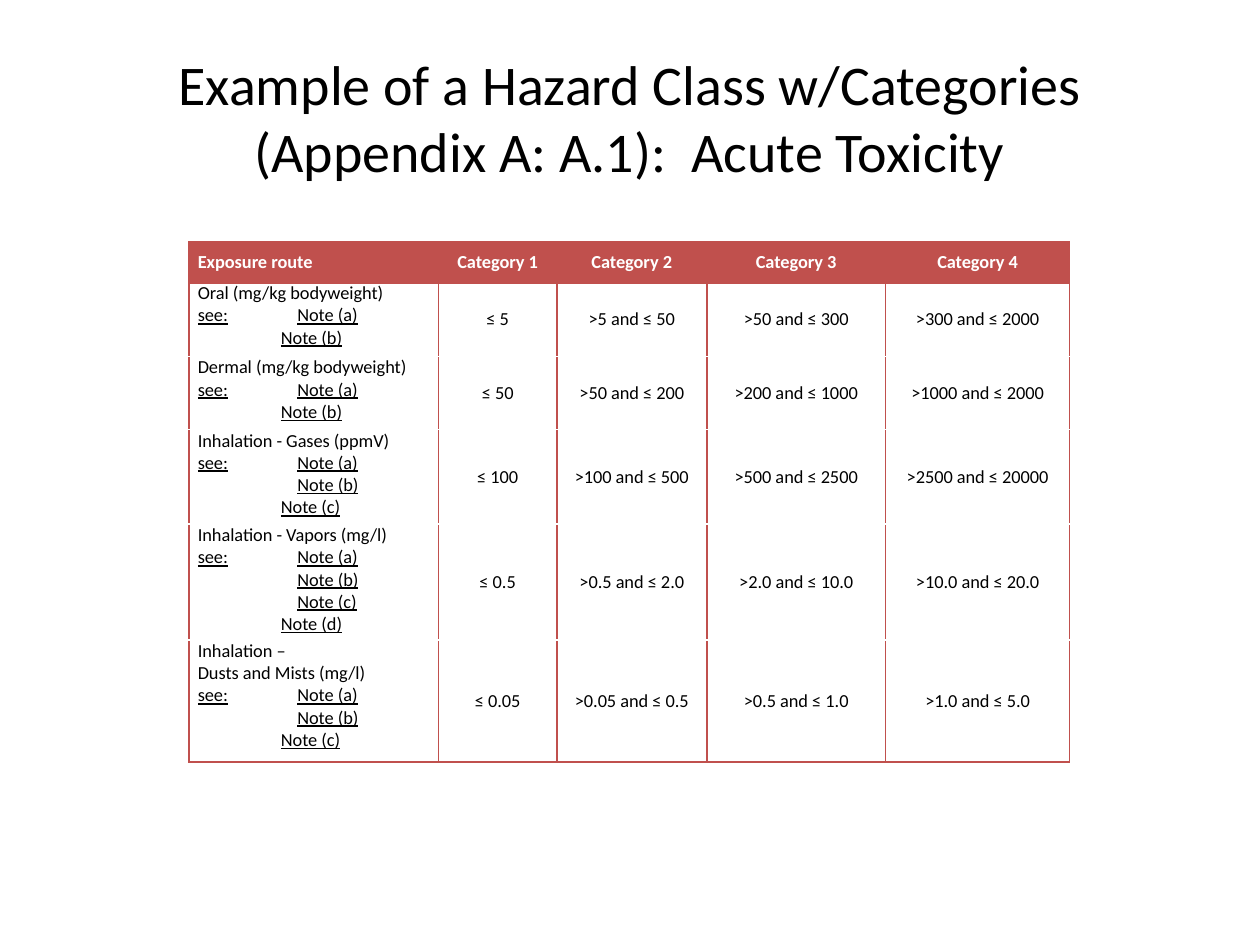
from lxml.etree import SubElement
from pptx import Presentation
from pptx.dml.color import RGBColor
from pptx.enum.text import MSO_ANCHOR, PP_ALIGN
from pptx.oxml.ns import qn
from pptx.util import Inches, Pt

RED, BLACK, WHITE = "C0504D", "000000", "FFFFFF"
FONT = "Calibri"
NOTE_INDENT, LAST_NOTE_INDENT = 0.79, 0.66
COL_WIDTHS = [1.98, 0.94, 1.19, 1.42, 1.46]
ROW_HEIGHTS = [0.32, 0.59, 0.58, 0.75, 0.92, 0.97]
HEADERS = ["Exposure route", "Category 1", "Category 2", "Category 3", "Category 4"]
ROUTES = [
    (["Oral (mg/kg bodyweight)"], "ab",
     ["≤ 5", ">5 and ≤ 50", ">50 and ≤ 300", ">300 and ≤ 2000"]),
    (["Dermal (mg/kg bodyweight)"], "ab",
     ["≤ 50", ">50 and ≤ 200", ">200 and ≤ 1000", ">1000 and ≤ 2000"]),
    (["Inhalation - Gases (ppmV)"], "abc",
     ["≤ 100", ">100 and ≤ 500", ">500 and ≤ 2500", ">2500 and ≤ 20000"]),
    (["Inhalation - Vapors (mg/l)"], "abcd",
     ["≤ 0.5", ">0.5 and ≤ 2.0", ">2.0 and ≤ 10.0", ">10.0 and ≤ 20.0"]),
    (["Inhalation –", "Dusts and Mists (mg/l)"], "abc",
     ["≤ 0.05", ">0.05 and ≤ 0.5", ">0.5 and ≤ 1.0", ">1.0 and ≤ 5.0"]),
]


def rgb(color):
    return RGBColor.from_string(color)


def format_run(r, size, color, bold=False, underline=False):
    r.font.name = FONT
    r.font.size = Pt(size)
    r.font.bold = bold
    r.font.underline = underline
    r.font.color.rgb = rgb(color)


def add_title(slide, text):
    sp = slide.shapes.add_textbox(Inches(0.5), Inches(0.3), Inches(9), Inches(1.25))
    tf = sp.text_frame
    tf.word_wrap = True
    tf.vertical_anchor = MSO_ANCHOR.MIDDLE
    tf.text = text
    p = tf.paragraphs[0]
    p.alignment = PP_ALIGN.CENTER
    format_run(p.runs[0], 32, BLACK)


def set_borders(cell, widths):
    tcPr = cell._tc.get_or_add_tcPr()
    for side, width in widths.items():
        ln = SubElement(tcPr, qn(f"a:ln{side}"), w=str(Pt(width)))
        fill = SubElement(ln, qn("a:solidFill"))
        SubElement(fill, qn("a:srgbClr"), val=RED)


def style_cell(cell, header):
    cell.margin_left = cell.margin_right = Inches(0.07)
    cell.margin_top = cell.margin_bottom = 0
    if header:
        set_borders(cell, {"L": 1, "R": 1, "T": 1, "B": 2})
        cell.fill.solid()
        cell.fill.fore_color.rgb = rgb(RED)
    else:
        set_borders(cell, {"L": 1, "R": 1, "B": 1})
        cell.fill.background()


def fill_cell(cell, text, header=False, align=PP_ALIGN.CENTER):
    style_cell(cell, header)
    cell.vertical_anchor = MSO_ANCHOR.MIDDLE
    cell.text_frame.text = text
    p = cell.text_frame.paragraphs[0]
    p.alignment = align
    format_run(p.runs[0], 10.5, WHITE if header else BLACK, bold=header)


def add_text(p, text, underline=False):
    r = p.add_run()
    r.text = text
    format_run(r, 10.5, BLACK, underline=underline)


def add_tab_stop(p, position):
    tabs = SubElement(p._p.get_or_add_pPr(), qn("a:tabLst"))
    SubElement(tabs, qn("a:tab"), pos=str(Inches(position)), algn="l")


def fill_route_cell(cell, names, notes):
    style_cell(cell, header=False)
    cell.vertical_anchor = MSO_ANCHOR.TOP
    tf = cell.text_frame
    for i, name in enumerate(names):
        add_text(tf.add_paragraph() if i else tf.paragraphs[0], name)
    for note in notes:
        p = tf.add_paragraph()
        if note == notes[0]:
            add_tab_stop(p, NOTE_INDENT)
            add_text(p, "see:", underline=True)
            add_text(p, "\t")
        else:
            indent = LAST_NOTE_INDENT if note == notes[-1] else NOTE_INDENT
            p._p.get_or_add_pPr().set("marL", str(Inches(indent)))
        add_text(p, f"Note ({note})", underline=True)


def add_toxicity_table(slide):
    frame = slide.shapes.add_table(
        len(ROW_HEIGHTS), len(COL_WIDTHS), Inches(1.5), Inches(1.92),
        Inches(sum(COL_WIDTHS)), Inches(sum(ROW_HEIGHTS)))
    table = frame.table
    table.horz_banding = False
    for col, width in zip(table.columns, COL_WIDTHS):
        col.width = Inches(width)
    for row, height in zip(table.rows, ROW_HEIGHTS):
        row.height = Inches(height)
    for c, text in enumerate(HEADERS):
        align = PP_ALIGN.CENTER if c else PP_ALIGN.LEFT
        fill_cell(table.cell(0, c), text, header=True, align=align)
    for r, (names, notes, limits) in enumerate(ROUTES, 1):
        fill_route_cell(table.cell(r, 0), names, notes)
        for c, limit in enumerate(limits, 1):
            fill_cell(table.cell(r, c), limit)


def main():
    prs = Presentation()
    prs.slide_width, prs.slide_height = Inches(10), Inches(7.5)
    slide = prs.slides.add_slide(prs.slide_layouts[6])
    add_title(slide, "Example of a Hazard Class w/Categories (Appendix A: A.1):  Acute Toxicity")
    add_toxicity_table(slide)
    prs.save("out.pptx")


if __name__ == "__main__":
    main()
